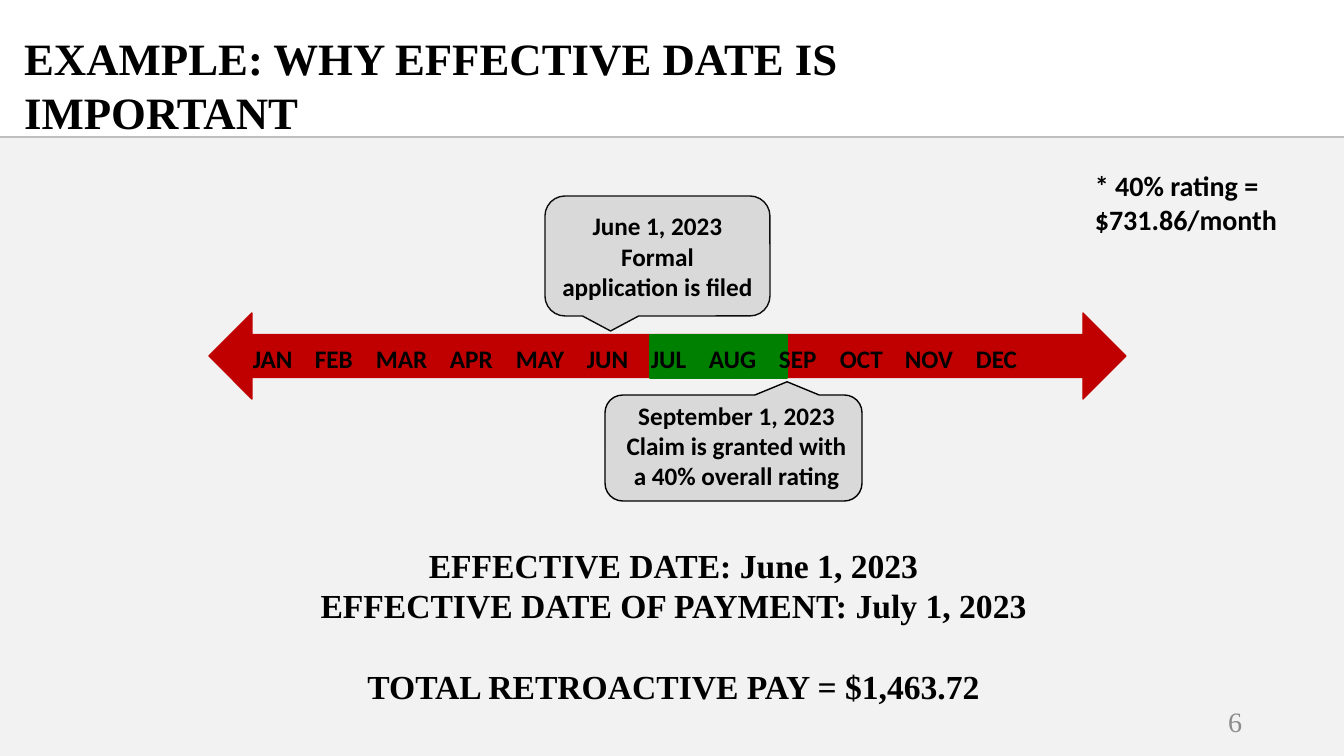
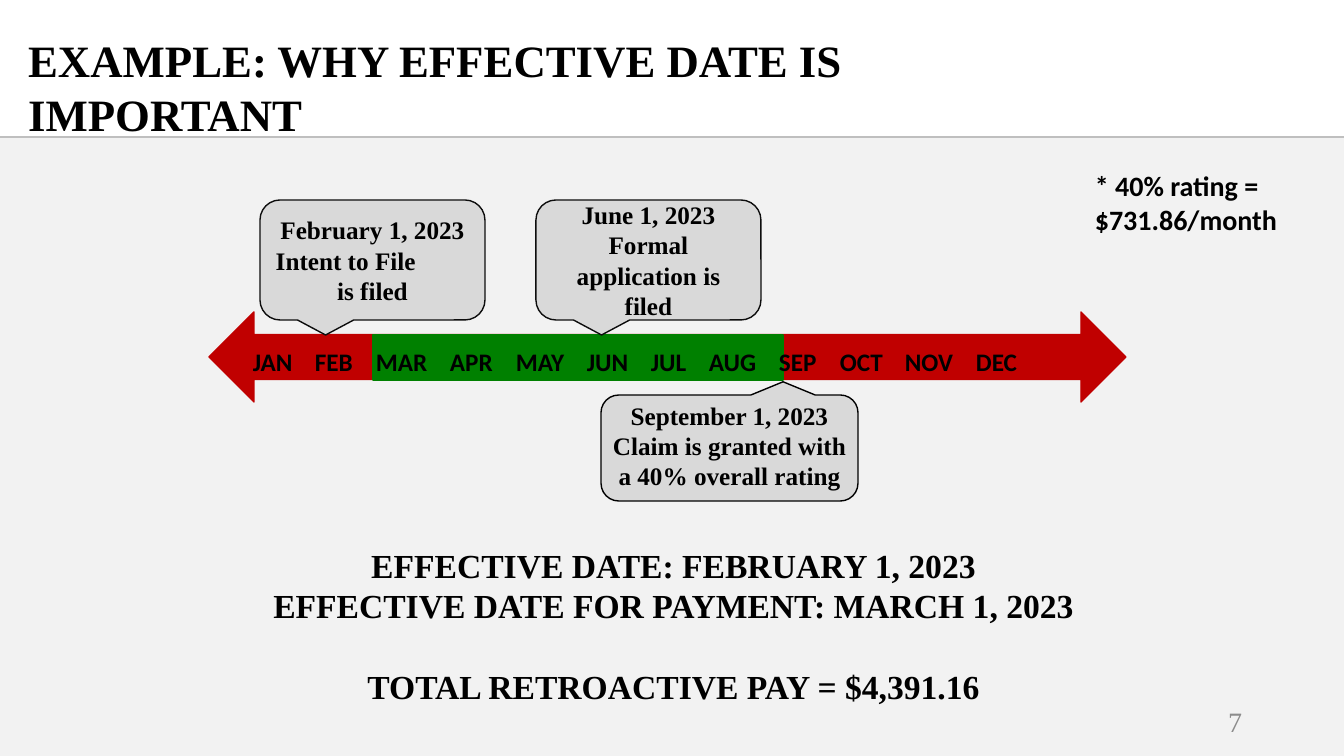
from lxml.etree import SubElement
from pptx import Presentation
from pptx.dml.color import RGBColor
from pptx.enum.shapes import MSO_CONNECTOR, MSO_SHAPE
from pptx.enum.text import MSO_ANCHOR, MSO_AUTO_SIZE, PP_ALIGN
from pptx.oxml.ns import qn
from pptx.util import Pt

PX = 12192000 / 1344
LEFT, CENTER, RIGHT = PP_ALIGN.LEFT, PP_ALIGN.CENTER, PP_ALIGN.RIGHT
TOP, MIDDLE = MSO_ANCHOR.TOP, MSO_ANCHOR.MIDDLE
SERIF, SANS = "Times New Roman", "Calibri"
RED, GREEN, GRAY, BLACK = "C00000", "008000", "D9D9D9", "000000"
CALLOUT = MSO_SHAPE.ROUNDED_RECTANGULAR_CALLOUT
TITLE = "EXAMPLE: WHY EFFECTIVE DATE IS IMPORTANT"
RATING = "* 40% rating = $731.86/month"
GRANT = ["September 1, 2023", "Claim is granted with a 40% overall rating"]
MONTHS = "JAN FEB MAR APR MAY JUN JUL AUG SEP OCT NOV DEC".split()
TABS = [62, 123, 197, 263, 334, 398, 456, 526, 587, 652, 723]

SLIDES = [
    {
        "number": "6", "title": (14, 26, 955, 119), "font": SANS,
        "arrow": (209, 313, 917, 86), "period": (650, 335, 137, 43),
        "months": 338, "grant": 605, "grant_text": 608,
        "events": [(545, 196, ["June 1, 2023", "Formal application is filed"])],
        "summary": ["EFFECTIVE DATE: June 1, 2023",
                    "EFFECTIVE DATE OF PAYMENT: July 1, 2023",
                    "TOTAL RETROACTIVE PAY = $1,463.72"],
    },
    {
        "number": "7", "title": (18, 28, 877, 149), "font": SERIF,
        "arrow": (209, 312, 917, 90), "period": (373, 335, 410, 45),
        "months": 341, "grant": 601, "grant_text": 601,
        "events": [(536, 200, ["June 1, 2023", "Formal application is filed"]),
                   (260, 200, ["February 1, 2023", "Intent to File", "is filed"])],
        "summary": ["EFFECTIVE DATE: FEBRUARY 1, 2023",
                    "EFFECTIVE DATE FOR PAYMENT: MARCH 1, 2023",
                    "TOTAL RETROACTIVE PAY = $4,391.16"],
    },
]


def draw(s, kind, rect, fill, line=None):
    sp = s.shapes.add_shape(kind, *[round(v * PX) for v in rect])
    sp.shadow.inherit = False
    sp.fill.solid()
    sp.fill.fore_color.rgb = RGBColor.from_string(fill)
    if line:
        sp.line.color.rgb = RGBColor.from_string(line)
        sp.line.width = Pt(1)
    else:
        sp.line.fill.background()
    return sp


def write(sp, lines, size, font, rect=None, align=LEFT, anchor=TOP,
          color=BLACK, bold=True, tabs=()):
    if rect:
        for name, v in zip(("left", "top", "width", "height"), rect):
            setattr(sp, name, round(v * PX))
    tf = sp.text_frame
    frame = {"word_wrap": True, "auto_size": MSO_AUTO_SIZE.NONE,
             "vertical_anchor": anchor}
    for name, v in frame.items():
        setattr(tf, name, v)
    for i, line in enumerate(lines):
        p = tf.paragraphs[0] if i == 0 else tf.add_paragraph()
        p.alignment = align
        if tabs:
            stops = SubElement(p._p.get_or_add_pPr(), qn("a:tabLst"))
            for x in tabs:
                SubElement(stops, qn("a:tab"), pos=str(round(x * PX)), algn="l")
        r = p.add_run()
        r.text = line
        for name, v in {"size": Pt(size), "name": font, "bold": bold}.items():
            setattr(r.font, name, v)
        r.font.color.rgb = RGBColor.from_string(color)
    return tf


prs = Presentation()
prs.slide_width, prs.slide_height = round(1344 * PX), round(756 * PX)
layout = prs.slide_layouts[5]

for number, d in enumerate(SLIDES):
    s = prs.slides.add_slide(layout)
    if number == 0:
        band = draw(s, MSO_SHAPE.RECTANGLE, (0, 138, 1344, 618), "F2F2F2")
        rule = s.shapes.add_connector(MSO_CONNECTOR.STRAIGHT, 0, round(137 * PX),
                                      prs.slide_width, round(137 * PX))
        rule.line.color.rgb = RGBColor.from_string("BFBFBF")
        rule.line.width = Pt(1.5)
        SubElement(rule.element.spPr, qn("a:effectLst"))
        for i, sp in enumerate((band, rule)):
            layout.shapes.element.insert(2 + i, sp.element)

    write(s.shapes.title, [TITLE], 32, SERIF, d["title"])
    draw(s, MSO_SHAPE.LEFT_RIGHT_ARROW, d["arrow"], RED, RED)
    draw(s, MSO_SHAPE.RECTANGLE, d["period"], GREEN, GREEN)

    for x, y, lines in d["events"]:
        sp = draw(s, CALLOUT, (x, y, 225, 120), GRAY, "0D0D0D")
        tf = write(sp, lines, 18, d["font"], align=CENTER, anchor=MIDDLE)
        if len(lines) == 3:
            tf.paragraphs[1].alignment = LEFT

    sp = draw(s, CALLOUT, (d["grant"], 395, 257, 106), GRAY, BLACK)
    sp.rotation = 180

    texts = [
        (GRANT, 18, d["font"], (d["grant_text"], 395, 257, 102), {"align": CENTER}),
        (["\t".join(MONTHS)], 18, SANS, (243, d["months"], 882, 40), {"tabs": TABS}),
        ([RATING], 20, SANS, (1085, 164, 210, 78), {}),
        ([d["number"]], 20, SERIF, (950, 701, 302, 40),
         {"align": RIGHT, "anchor": MIDDLE, "color": "8C8C8C", "bold": False}),
        (d["summary"], 24, SERIF, (221, 540, 905, 173), {"align": CENTER}),
    ]
    for lines, size, font, rect, style in texts:
        tf = write(s.shapes.add_textbox(0, 0, 0, 0), lines, size, font, rect, **style)
    tf.paragraphs[2].space_before = Pt(29)

prs.save("out.pptx")
